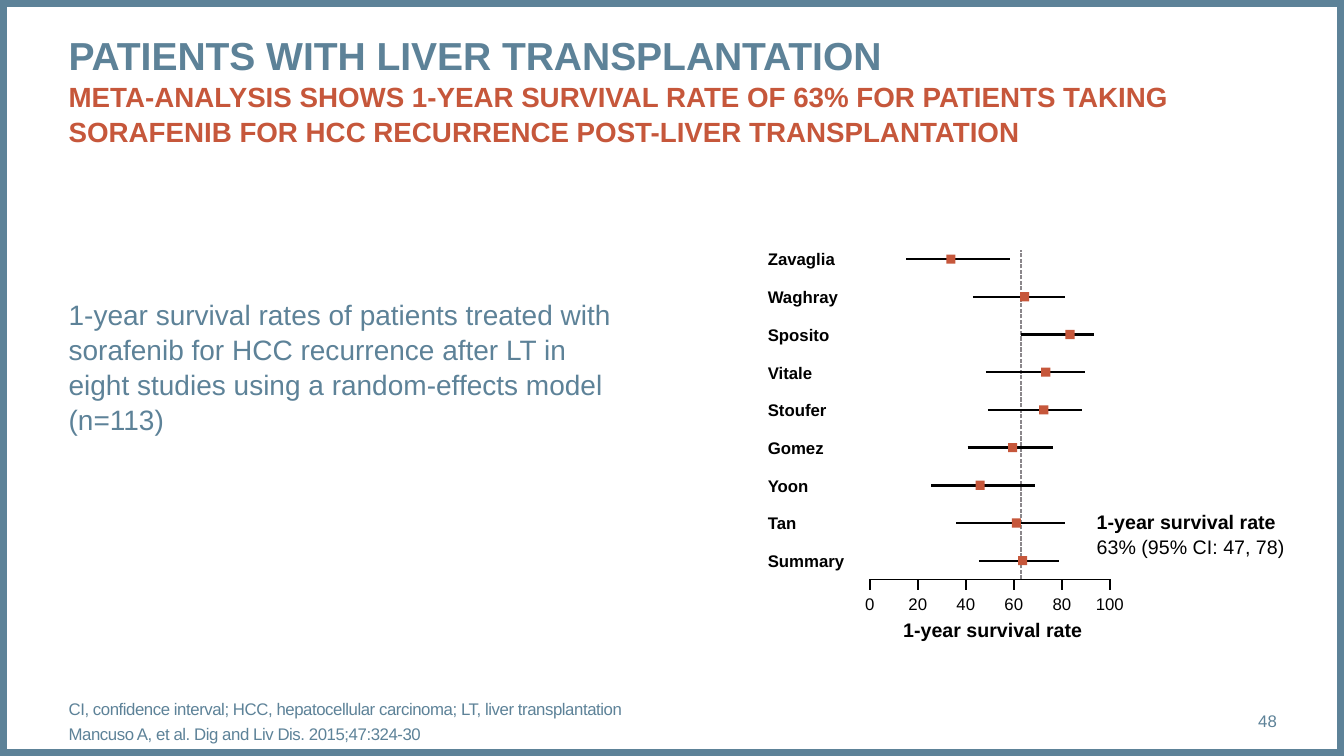
from dataclasses import dataclass

import lxml.etree
import pptx
import pptx.dml.color
import pptx.enum.dml
import pptx.enum.shapes
import pptx.enum.text
import pptx.oxml.ns
import pptx.slide
import pptx.text.text
import pptx.util

Cm = pptx.util.Cm
Pt = pptx.util.Pt
RGB = pptx.dml.color.RGBColor
Align = pptx.enum.text.PP_ALIGN
Anchor = pptx.enum.text.MSO_ANCHOR


@dataclass(frozen=True)
class Theme:
    font: str = "Arial"
    slate: RGB = RGB(0x5D, 0x82, 0x98)
    rust: RGB = RGB(0xC6, 0x57, 0x3B)
    ink: RGB = RGB(0, 0, 0)
    guide: RGB = RGB(0x8B, 0x87, 0x8B)
    title: float = 27.9
    subtitle: float = 19.8
    body: float = 20
    caption: float = 14
    small: float = 12
    line_spacing: float = 1.04


@dataclass(frozen=True)
class Box:
    left: float
    top: float
    width: float
    height: float


@dataclass(frozen=True)
class Style:
    size: float
    color: RGB
    bold: bool = False
    align: Align = Align.LEFT
    anchor: Anchor = Anchor.TOP
    space_before: float = 0


@dataclass(frozen=True)
class Study:
    name: str
    low: float
    rate: float
    high: float


THEME = Theme()
WIDTH, HEIGHT = 33.87, 19.05
MARGIN = 1.73
AXIS_LEFT, AXIS_TOP, AXIS_WIDTH = 21.92, 14.6, 6.05
TICK_LENGTH = 0.26
FIRST_ROW, ROW_PITCH = 6.53, 0.95
NAME_LEFT = 19.35
MARKER = 0.23
POOLED_RATE = 63

STUDIES = [
    Study("Zavaglia", 15.1, 33.8, 58.4),
    Study("Waghray", 42.9, 64.5, 81.5),
    Study("Sposito", 63, 83.4, 93.3),
    Study("Vitale", 48.3, 73.3, 89.5),
    Study("Stoufer", 49.2, 72.5, 88.2),
    Study("Gomez", 40.8, 59.5, 76.1),
    Study("Yoon", 25.6, 46, 68.9),
    Study("Tan", 36.1, 61.1, 81.5),
    Study("Summary", 45.4, 63.7, 79),
]


def rate_x(rate: float) -> float:
    return AXIS_LEFT + AXIS_WIDTH * rate / 100


def add_text(slide: pptx.slide.Slide, text: str, box: Box, style: Style) -> pptx.text.text.TextFrame:
    frame = slide.shapes.add_textbox(Cm(box.left), Cm(box.top), Cm(box.width), Cm(box.height)).text_frame
    frame.word_wrap = True
    frame.margin_left = frame.margin_top = frame.margin_right = frame.margin_bottom = 0
    frame.vertical_anchor = style.anchor
    frame.text = text
    for paragraph in frame.paragraphs:
        paragraph.alignment = style.align
        paragraph.line_spacing = THEME.line_spacing
        paragraph.space_before = Pt(style.space_before)
        for run in paragraph.runs:
            run.font.name = THEME.font
            run.font.size = Pt(style.size)
            run.font.bold = style.bold
            run.font.color.rgb = style.color
    return frame


def add_line(slide: pptx.slide.Slide, x1: float, y1: float, x2: float, y2: float,
             weight: float = 1, color: RGB = THEME.ink, dashed: bool = False) -> None:
    line = slide.shapes.add_connector(
        pptx.enum.shapes.MSO_CONNECTOR.STRAIGHT, Cm(x1), Cm(y1), Cm(x2), Cm(y2))
    line.line.color.rgb = color
    line.line.width = Pt(weight)
    if dashed:
        line.line.dash_style = pptx.enum.dml.MSO_LINE.SQUARE_DOT
    lxml.etree.SubElement(line._element.spPr, pptx.oxml.ns.qn("a:effectLst"))


def add_rectangle(slide: pptx.slide.Slide, box: Box, fill: RGB | None = None,
                  outline: RGB | None = None, weight: float = 1) -> None:
    rectangle = slide.shapes.add_shape(
        pptx.enum.shapes.MSO_SHAPE.RECTANGLE,
        Cm(box.left), Cm(box.top), Cm(box.width), Cm(box.height))
    rectangle.shadow.inherit = False
    if fill is None:
        rectangle.fill.background()
    else:
        rectangle.fill.solid()
        rectangle.fill.fore_color.rgb = fill
    if outline is None:
        rectangle.line.fill.background()
    else:
        rectangle.line.color.rgb = outline
        rectangle.line.width = Pt(weight)


def add_copy(slide: pptx.slide.Slide) -> None:
    heading = add_text(
        slide,
        "PATIENTS WITH LIVER TRANSPLANTATION\vMETA-ANALYSIS SHOWS 1-YEAR SURVIVAL RATE OF 63% FOR "
        "PATIENTS TAKING SORAFENIB FOR HCC RECURRENCE POST-LIVER TRANSPLANTATION",
        Box(MARGIN, 0.75, 30.45, 2.39), Style(THEME.title, THEME.slate, bold=True))
    subtitle = heading.paragraphs[0].runs[1]
    subtitle.font.size = Pt(THEME.subtitle)
    subtitle.font.color.rgb = THEME.rust
    add_text(
        slide,
        "1-year survival rates of patients treated with sorafenib for HCC recurrence after LT in "
        "\veight studies using a random-effects model (n=113)",
        Box(MARGIN, 7.47, 15.01, 9.07), Style(THEME.body, THEME.slate))
    add_text(slide, "48", Box(29.21, 17.65, 2.97, 1.02),
             Style(THEME.small, THEME.slate, align=Align.RIGHT, anchor=Anchor.MIDDLE))
    footnotes = add_text(
        slide,
        "CI, confidence interval; HCC, hepatocellular carcinoma; LT, liver transplantation\n"
        "Mancuso A, et al. Dig and Liv Dis. 2015;47:324-30",
        Box(MARGIN, 17.65, 27, 1.02),
        Style(THEME.small, THEME.slate, anchor=Anchor.MIDDLE, space_before=3))
    for paragraph in footnotes.paragraphs:
        paragraph.runs[0].font._element.set("spc", "-30")


def add_forest_plot(slide: pptx.slide.Slide) -> None:
    add_line(slide, rate_x(0), AXIS_TOP, rate_x(100), AXIS_TOP)
    for rate in range(0, 101, 20):
        x = rate_x(rate)
        add_line(slide, x, AXIS_TOP, x, AXIS_TOP + TICK_LENGTH)
        add_text(slide, str(rate), Box(x - 0.5, 14.94, 1, 0.51),
                 Style(THEME.small, THEME.ink, align=Align.CENTER))
    add_text(slide, "1-year survival rate", Box(22.52, 15.54, 5, 0.6),
             Style(THEME.caption, THEME.ink, bold=True, align=Align.CENTER))
    pooled_x = rate_x(POOLED_RATE)
    add_line(slide, pooled_x, AXIS_TOP, pooled_x, 6.3, color=THEME.guide, dashed=True)
    for row, study in enumerate(STUDIES):
        y = FIRST_ROW + row * ROW_PITCH
        add_text(slide, study.name, Box(NAME_LEFT, y - 0.27, 2.3, 0.51),
                 Style(THEME.small, THEME.ink, bold=True))
        add_line(slide, rate_x(study.low), y, rate_x(study.high), y, weight=1.75)
        add_rectangle(slide, Box(rate_x(study.rate) - MARKER / 2, y - MARKER / 2, MARKER, MARKER),
                      fill=THEME.rust)
    result = add_text(slide, "1-year survival rate\n63% (95% CI: 47, 78)", Box(27.64, 12.83, 5.2, 1.19),
                      Style(THEME.caption, THEME.ink))
    result.paragraphs[0].runs[0].font.bold = True


def main() -> None:
    """Build the liver transplantation survival slide."""
    deck = pptx.Presentation()
    deck.slide_width, deck.slide_height = Cm(WIDTH), Cm(HEIGHT)
    slide = deck.slides.add_slide(deck.slide_layouts[6])
    add_rectangle(slide, Box(0, 0, WIDTH, HEIGHT), outline=THEME.slate, weight=10)
    add_copy(slide)
    add_forest_plot(slide)
    deck.save("out.pptx")


if __name__ == "__main__":
    main()
